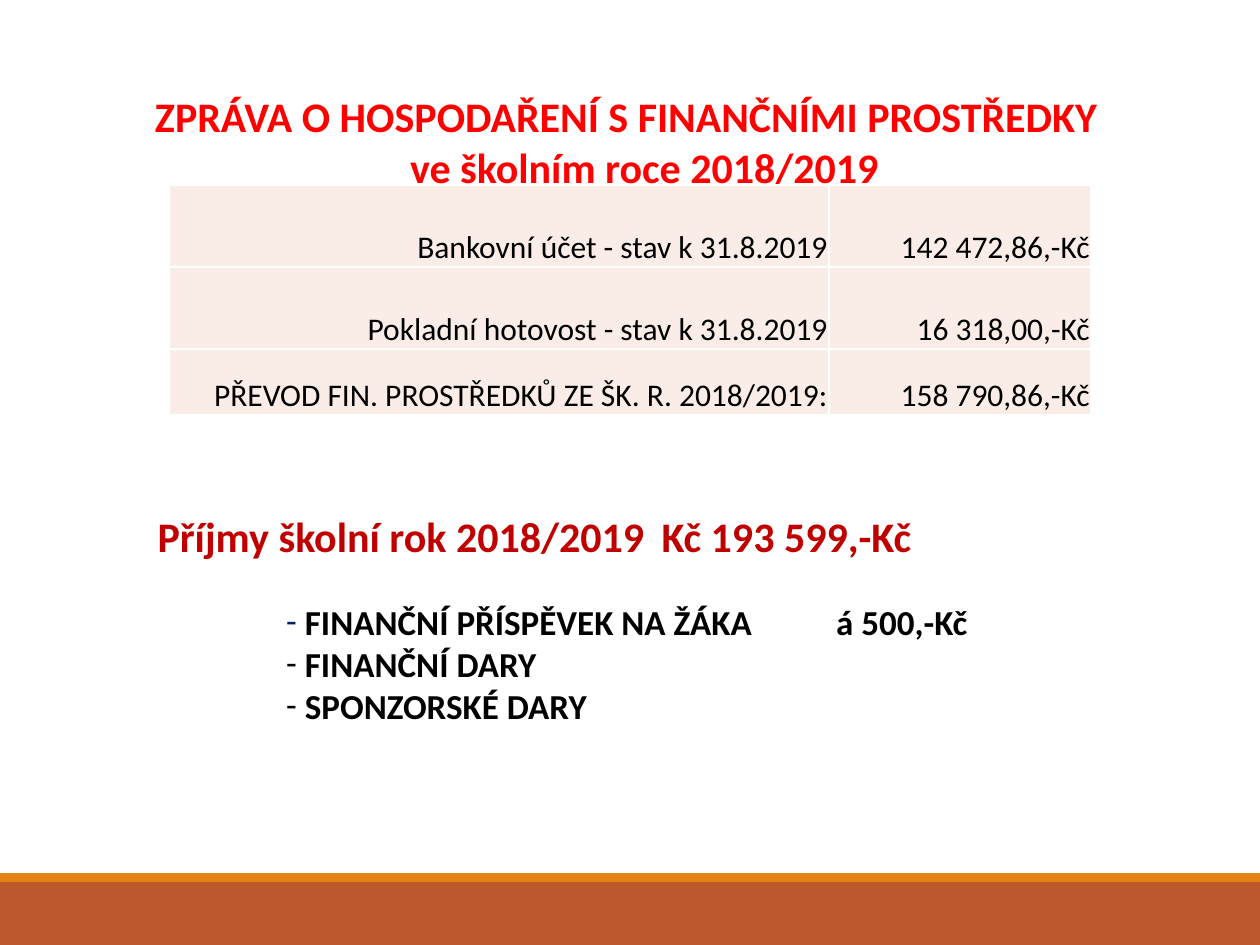
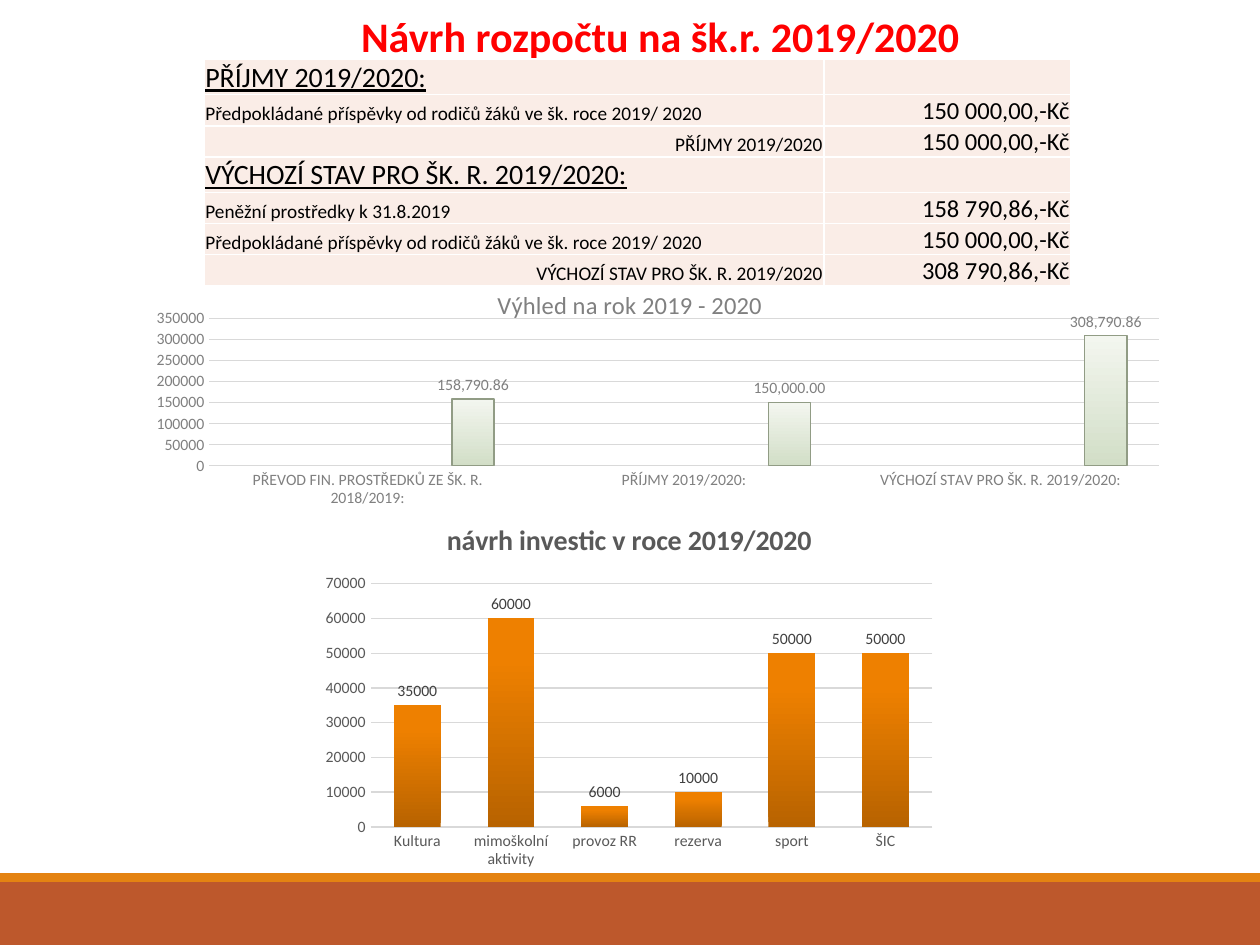
from lxml.etree import SubElement
from pptx import Presentation
from pptx.chart.data import CategoryChartData
from pptx.dml.color import RGBColor
from pptx.enum.chart import XL_CHART_TYPE, XL_LABEL_POSITION, XL_TICK_MARK
from pptx.enum.shapes import MSO_SHAPE
from pptx.enum.text import MSO_ANCHOR, MSO_AUTO_SIZE, PP_ALIGN
from pptx.oxml.ns import qn
from pptx.util import Inches, Pt

FONT = "Calibri"
RED = RGBColor(0xFF, 0x00, 0x00)
DARK_RED = RGBColor(0xC0, 0x00, 0x00)
NAVY = RGBColor(0x00, 0x20, 0x60)
BLACK = RGBColor(0x00, 0x00, 0x00)
RUST = RGBColor(0xBD, 0x58, 0x2C)
ORANGE = RGBColor(0xE4, 0x83, 0x12)
CELL_PINK = RGBColor(0xFA, 0xED, 0xE7)
GRID_GREY = RGBColor(0xD9, 0xD9, 0xD9)
LIGHT_TEXT = RGBColor(0x80, 0x80, 0x80)
MID_TEXT = RGBColor(0x59, 0x59, 0x59)
DARK_TEXT = RGBColor(0x40, 0x40, 0x40)
GREEN_LINE = RGBColor(0x91, 0x9C, 0x85)
GREEN_FILL = (RGBColor(0xD2, 0xDE, 0xC7), RGBColor(0xF3, 0xF6, 0xEF))
ORANGE_FILL = (RGBColor(0xB8, 0x63, 0x00), RGBColor(0xEE, 0x80, 0x00))

CONTRIBUTIONS = "Předpokládané příspěvky od rodičů žáků ve šk. roce 2019/ 2020"


# Text
def set_font(font, size, color=BLACK, bold=False, underline=False):
    font.name, font.size, font.bold = FONT, Pt(size), bold
    font.underline = underline
    font.color.rgb = color


def write(paragraph, text, align=PP_ALIGN.LEFT, before=0, **font_format):
    paragraph.alignment = align
    paragraph.space_before = Pt(before)
    run = paragraph.add_run()
    run.text = text
    set_font(run.font, **font_format)


def indent(paragraph, left, first=0):
    properties = paragraph._p.get_or_add_pPr()
    properties.set("marL", str(Inches(left)))
    properties.set("indent", str(Inches(first)))
    return properties


def add_right_tab(properties, position):
    tabs = SubElement(properties, qn("a:tabLst"))
    SubElement(tabs, qn("a:tab"), pos=str(Inches(position)), algn="r")


def add_dash(properties, color):
    bullet_color = SubElement(properties, qn("a:buClr"))
    SubElement(bullet_color, qn("a:srgbClr"), val=str(color))
    SubElement(properties, qn("a:buFont"), typeface=FONT)
    SubElement(properties, qn("a:buChar"), char="-")


def place(placeholder, left, top, width, height):
    placeholder.left, placeholder.top = Inches(left), Inches(top)
    placeholder.width, placeholder.height = Inches(width), Inches(height)
    frame = placeholder.text_frame
    frame.word_wrap = True
    frame.auto_size = MSO_AUTO_SIZE.NONE
    frame.vertical_anchor = MSO_ANCHOR.TOP
    frame.margin_left = frame.margin_right = 0
    return frame


def add_title(slide, box, lines):
    frame = place(slide.shapes.title, *box)
    for i, (line, shift) in enumerate(lines):
        paragraph = frame.add_paragraph() if i else frame.paragraphs[0]
        write(paragraph, line, align=PP_ALIGN.CENTER, size=24, color=RED, bold=True)
        indent(paragraph, shift)


# Footer bands
def add_bands(slide):
    for top, height, color in ((7, 0.5, RUST), (6.93, 0.07, ORANGE)):
        band = slide.shapes.add_shape(
            MSO_SHAPE.RECTANGLE, 0, Inches(top), Inches(10), Inches(height))
        band.shadow.inherit = False
        band.fill.solid()
        band.fill.fore_color.rgb = color
        band.line.fill.background()


# Tables
def add_money_table(slide, left, top, widths, heights, rows):
    """Each row is (label, label format, amount, amount size)."""
    table = slide.shapes.add_table(
        len(rows), 2, Inches(left), Inches(top),
        Inches(sum(widths)), Inches(sum(heights))).table
    table.first_row = table.horz_banding = False
    for column, width in zip(table.columns, widths):
        column.width = Inches(width)
    for r, (label, label_format, amount, amount_size) in enumerate(rows):
        table.rows[r].height = Inches(heights[r])
        amount_format = {"size": amount_size, "align": PP_ALIGN.RIGHT}
        for c, (text, text_format) in enumerate(
                ((label, label_format), (amount, amount_format))):
            cell = table.cell(r, c)
            cell.fill.solid()
            cell.fill.fore_color.rgb = CELL_PINK
            cell.vertical_anchor = MSO_ANCHOR.BOTTOM
            cell.margin_left = cell.margin_right = cell.margin_top = Inches(0.01)
            cell.margin_bottom = 0
            paragraph = cell.text_frame.paragraphs[0]
            if text:
                write(paragraph, text, **text_format)
            else:
                SubElement(paragraph._p, qn("a:endParaRPr"), sz=str(amount_size * 100))


# Charts
def set_plot_area(chart, x, y, w, h):
    plot_area = chart._chartSpace.chart.plotArea
    for old in plot_area.findall(qn("c:layout")):
        plot_area.remove(old)
    layout = SubElement(plot_area, qn("c:layout"))
    plot_area.insert(0, layout)
    manual = SubElement(layout, qn("c:manualLayout"))
    for tag, value in (("layoutTarget", "inner"), ("xMode", "edge"), ("yMode", "edge"),
                       ("x", x), ("y", y), ("w", w), ("h", h)):
        SubElement(manual, qn(f"c:{tag}"), val=str(value))


def style_axes(chart, color):
    for axis in (chart.category_axis, chart.value_axis):
        axis.major_tick_mark = axis.minor_tick_mark = XL_TICK_MARK.NONE
        set_font(axis.tick_labels.font, 9, color)
        axis.format.line.fill.background()
    grid_line = chart.value_axis.major_gridlines.format.line
    grid_line.color.rgb, grid_line.width = GRID_GREY, Pt(0.75)


def style_columns(series, fill_colors, light_stop, label_color, number_format):
    fill = series.format.fill
    fill.gradient()
    fill.gradient_angle = 90
    for stop, color in zip(fill.gradient_stops, fill_colors):
        stop.color.rgb = color
    fill.gradient_stops[1].position = light_stop
    labels = series.data_labels
    labels.show_value = True
    labels.position = XL_LABEL_POSITION.OUTSIDE_END
    labels.number_format, labels.number_format_is_linked = number_format, False
    set_font(labels.font, 9, label_color)


def add_column_chart(slide, box, plot_box, title, title_format, categories,
                     series_values, gap, overlap, axis_color):
    data = CategoryChartData()
    data.categories = categories
    for number, values in enumerate(series_values, 1):
        data.add_series(f"Series {number}", values)
    chart = slide.shapes.add_chart(
        XL_CHART_TYPE.COLUMN_CLUSTERED, *map(Inches, box), data).chart
    set_font(chart.font, 10)
    chart.has_legend = False
    chart.has_title = True
    write(chart.chart_title.text_frame.paragraphs[0], title,
          align=PP_ALIGN.CENTER, **title_format)
    chart.chart_title.include_in_layout = False
    plot = chart.plots[0]
    plot.vary_by_categories = False
    plot.gap_width, plot.overlap = gap, overlap
    style_axes(chart, axis_color)
    set_plot_area(chart, *plot_box)
    return chart


# Slides
def build_report(slide):
    add_bands(slide)
    add_title(slide, (0.35, 0.67, 9.24, 0.95), [
        ("ZPRÁVA O HOSPODAŘENÍ S\u00a0FINANČNÍMI PROSTŘEDKY", 0),
        ("ve školním roce 2018/2019", 0.29)])

    right = {"size": 18, "align": PP_ALIGN.RIGHT}
    add_money_table(slide, 1.34, 1.47, (5.24, 2.08), (0.65, 0.65, 0.52), [
        ("Bankovní účet - stav k 31.8.2019", right, "142 472,86,-Kč", 18),
        ("Pokladní hotovost - stav k 31.8.2019", right, "16 318,00,-Kč", 18),
        ("PŘEVOD FIN. PROSTŘEDKŮ ZE ŠK. R. 2018/2019:", right, "158 790,86,-Kč", 18)])

    # Income heading and its sources
    income = place(slide.placeholders[1], 1.25, 4, 7.6, 2)
    heading = income.paragraphs[0]
    write(heading, "Příjmy školní rok 2018/2019\tKč 193 599,-Kč",
          size=24, color=DARK_RED, bold=True)
    properties = indent(heading, 0)
    SubElement(properties, qn("a:buNone"))
    add_right_tab(properties, 7.5)
    sources = (("FINANČNÍ PŘÍSPĚVEK NA ŽÁKA\tá 500,-Kč", NAVY, 23),
               ("FINANČNÍ DARY", BLACK, 0), ("SPONZORSKÉ DARY", BLACK, 0))
    for text, dash_color, before in sources:
        source = income.add_paragraph()
        write(source, text, before=before, size=20, bold=True)
        properties = indent(source, 1.17, -0.15)
        add_dash(properties, dash_color)
        if "\t" in text:
            add_right_tab(properties, 7.26)


def build_budget(slide):
    add_bands(slide)
    add_title(slide, (2.09, 0.03, 6.3, 0.5), [("Návrh rozpočtu na šk.r. 2019/2020", 0)])

    section = {"size": 16, "underline": True}
    item = {"size": 11}
    total = {"size": 11, "align": PP_ALIGN.RIGHT}
    rows = [
        ("PŘÍJMY 2019/2020:", section, "", 14),
        (CONTRIBUTIONS, item, "150 000,00,-Kč", 14),
        ("PŘÍJMY 2019/2020", total, "150 000,00,-Kč", 14),
        ("VÝCHOZÍ STAV PRO ŠK. R. 2019/2020:", section, "", 14),
        ("Peněžní prostředky k 31.8.2019", item, "158 790,86,-Kč", 14),
        (CONTRIBUTIONS, item, "150 000,00,-Kč", 14),
        ("VÝCHOZÍ STAV PRO ŠK. R. 2019/2020", total, "308 790,86,-Kč", 14)]
    heights = [0.27 if row[1] is section else 0.24 for row in rows]
    add_money_table(slide, 1.62, 0.47, (4.92, 1.96), heights, rows)

    # Outlook: only the last of six series holds values
    outlook = add_column_chart(
        slide, (0.71, 2.16, 8.58, 1.89), (0.111, 0.195, 0.878, 0.619),
        "Výhled na rok 2019 - 2020", {"size": 14, "color": LIGHT_TEXT},
        ("PŘEVOD FIN. PROSTŘEDKŮ ZE ŠK. R. 2018/2019:", "PŘÍJMY 2019/2020:",
         "VÝCHOZÍ STAV PRO ŠK. R. 2019/2020:"),
        [(None,) * 3] * 5 + [(158790.86, 150000, 308790.86)],
        gap=150, overlap=0, axis_color=LIGHT_TEXT)
    balance = outlook.plots[0].series[5]
    style_columns(balance, GREEN_FILL, 1, LIGHT_TEXT, "#,##0.00")
    balance.format.line.color.rgb = GREEN_LINE
    balance.format.line.width = Pt(0.75)

    # Planned investments
    investments = add_column_chart(
        slide, (2.49, 3.98, 5.01, 2.97), (0.09, 0.22, 0.89, 0.65),
        "návrh investic v roce 2019/2020", {"size": 16, "color": MID_TEXT, "bold": True},
        ("Kultura", "mimoškolní aktivity", "provoz RR", "rezerva", "sport", "ŠIC"),
        [(35000, 60000, 6000, 10000, 50000, 50000)],
        gap=100, overlap=-24, axis_color=MID_TEXT)
    style_columns(investments.plots[0].series[0], ORANGE_FILL, 0.8, DARK_TEXT, "General")
    axis_line = investments.category_axis.format.line
    axis_line.color.rgb, axis_line.width = GRID_GREY, Pt(1)


def main():
    deck = Presentation()
    deck.slide_width, deck.slide_height = Inches(10), Inches(7.5)
    build_report(deck.slides.add_slide(deck.slide_layouts[1]))
    build_budget(deck.slides.add_slide(deck.slide_layouts[5]))
    deck.save("out.pptx")


if __name__ == "__main__":
    main()
